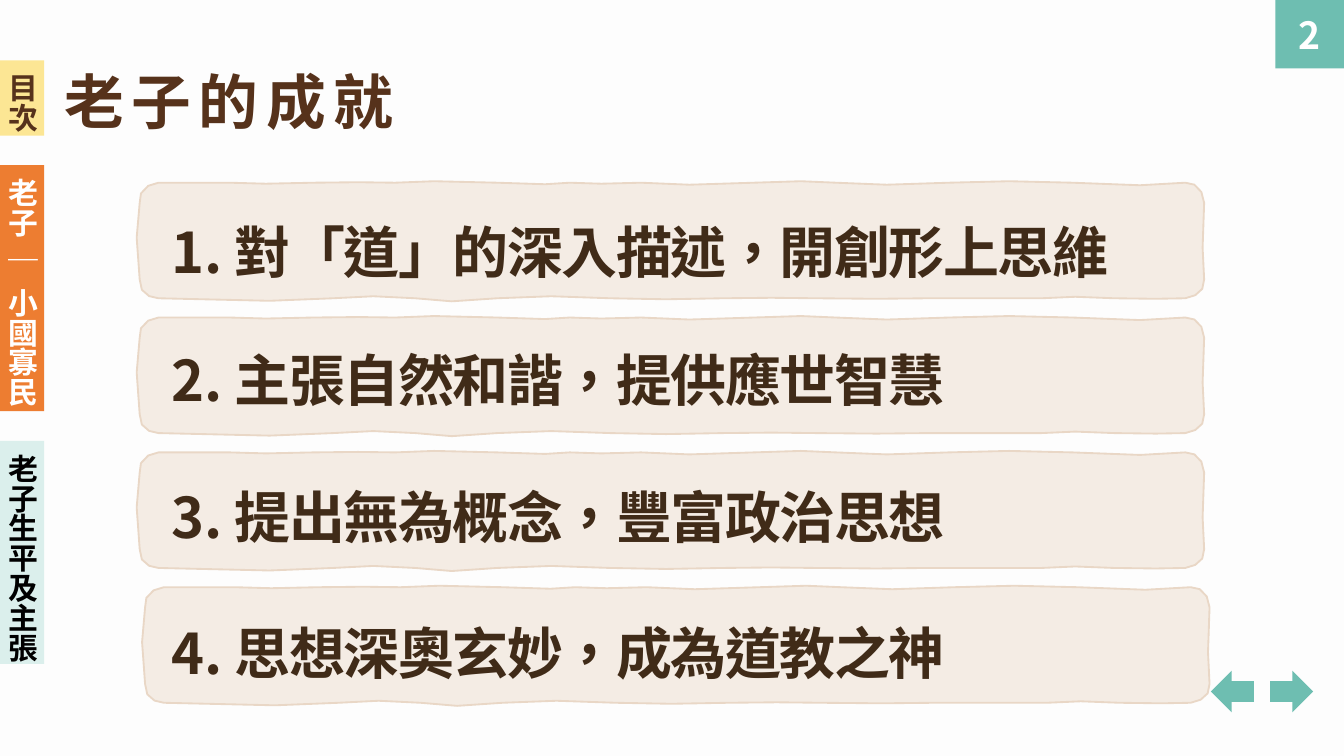
import pptx
import pptx.dml.color
import pptx.enum.lang
import pptx.enum.shapes
import pptx.enum.text
import pptx.oxml.ns
import pptx.util
from lxml import etree

Pt = pptx.util.Pt
qn = pptx.oxml.ns.qn
ALIGN = pptx.enum.text.PP_ALIGN
ANCHOR = pptx.enum.text.MSO_ANCHOR
SHAPE = pptx.enum.shapes.MSO_SHAPE

FONT = "Noto Sans CJK SC"
COLORS = {
    "paper": "FDFDFD", "teal": "6EBEB1", "mint": "DBEFEC", "yellow": "FCE694",
    "orange": "ED7D31", "panel": "F4ECE4", "edge": "E9D7C6", "brown": "56321B",
    "coffee": "402B18", "white": "FFFFFF", "black": "000000",
}
TITLE = "老子的成就"
PAGE_NUMBER = "2"
TABS = [
    (32.4, 40.32, "yellow", "brown", [("目次", 0)]),
    (88.56, 131.76, "orange", "white", [("老子 ｜", 0), (" ", 3.6), ("小國寡民", 0)]),
    (236.16, 119.52, "mint", "black", [("老子生平及主張", 0)]),
]
ACHIEVEMENTS = [
    ("對「道」的深入描述，開創形上思維", 74.88, 105.84),
    ("主張自然和諧，提供應世智慧", 74.88, 174.24),
    ("提出無為概念，豐富政治思想", 74.88, 247.68),
    ("思想深奧玄妙，成為道教之神", 77.76, 320.4),
]
ARROWS = [(SHAPE.LEFT_ARROW, 648.72), (SHAPE.RIGHT_ARROW, 680.4)]
PANEL_TOP, PANEL_PITCH = 97.92, 72.24
PANEL_UNIT = 0.72
CORNER_SIZE, CORNER_STEPS, SIDE_STEPS = 16, 3, 2
PANEL_START = (0, 15)
PANEL_CURVES = [
    (-2, 8, 6, 0, 14, 0), (32, -2, 56, 2, 67, 0), (79, -1, 106, 3, 129, 0),
    (151, -2, 176, 1, 190, 0), (204, 0, 228, -3, 266, 0), (304, 4, 305, -1, 320, 0),
    (335, 2, 350, 0, 373, 0), (396, 1, 418, 3, 457, 0), (496, -2, 491, -1, 518, 0),
    (545, 2, 564, 2, 602, 0), (641, -1, 652, -2, 694, 0), (736, 3, 758, 2, 778, 0),
    (785, -1, 792, 6, 792, 15), (791, 42, 790, 58, 792, 72), (793, 80, 786, 85, 778, 86),
    (767, 85, 748, 88, 725, 86), (701, 84, 690, 85, 671, 86), (652, 87, 606, 85, 587, 86),
    (568, 87, 531, 86, 503, 86), (475, 86, 466, 85, 434, 86), (402, 87, 381, 87, 350, 86),
    (320, 85, 291, 83, 266, 86), (241, 89, 221, 89, 205, 86), (188, 83, 159, 85, 144, 86),
    (129, 87, 76, 90, 14, 86), (7, 86, -1, 81, 0, 72), (-3, 49, -3, 31, 0, 15),
]


def rgb(name):
    return pptx.dml.color.RGBColor.from_string(COLORS[name])


def style(para, size, color, align=ALIGN.LEFT, spacing=0):
    para.alignment = align
    font = para.font
    font.name, font.size, font.bold = FONT, Pt(size), True
    font.color.rgb = rgb(color)
    font.language_id = pptx.enum.lang.MSO_LANGUAGE_ID.TRADITIONAL_CHINESE
    props = para._p.pPr.find(qn("a:defRPr"))
    props.set("spc", str(round(spacing * 100)))
    etree.SubElement(props, qn("a:ea"), typeface=FONT)


def place(shape, left, top, width, height):
    shape.left, shape.top = Pt(left), Pt(top)
    shape.width, shape.height = Pt(width), Pt(height)


def paint(shape, fill, line=None):
    shape.shadow.inherit = False
    shape.fill.solid()
    shape.fill.fore_color.rgb = rgb(fill)
    if line:
        shape.line.color.rgb = rgb(line)
        shape.line.width = Pt(1)
    else:
        shape.line.fill.background()


def add_block(kind, left, top, width, height, fill):
    block = page.shapes.add_shape(kind, Pt(left), Pt(top), Pt(width), Pt(height))
    paint(block, fill)
    block.text_frame.vertical_anchor = ANCHOR.MIDDLE
    return block


def trace(start, curves):
    points = [start]
    for x1, y1, x2, y2, x3, y3 in curves:
        x0, y0 = points[-1]
        is_corner = max(abs(x3 - x0), abs(y3 - y0)) <= CORNER_SIZE
        steps = CORNER_STEPS if is_corner else SIDE_STEPS
        for step in range(1, steps + 1):
            t = step / steps
            a, b, c, d = (1 - t) ** 3, 3 * t * (1 - t) ** 2, 3 * t * t * (1 - t), t ** 3
            points.append((a * x0 + b * x1 + c * x2 + d * x3,
                           a * y0 + b * y1 + c * y2 + d * y3))
    return points


def add_panel(left, top):
    points = [(Pt(left + x * PANEL_UNIT), Pt(top + y * PANEL_UNIT))
              for x, y in trace(PANEL_START, PANEL_CURVES)]
    builder = page.shapes.build_freeform(*points[0])
    builder.add_line_segments(points[1:-1], close=True)
    paint(builder.convert_to_shape(), "panel", "edge")


deck = pptx.Presentation()
deck.slide_width, deck.slide_height = Pt(720), Pt(405)
page = deck.slides.add_slide(deck.slide_layouts[5])
page.background.fill.solid()
page.background.fill.fore_color.rgb = rgb("paper")

title = page.shapes.title
place(title, 27.36, 30.96, 324.72, 46.08)
title.text_frame.text = TITLE
title.text_frame.word_wrap = True
title.text_frame.vertical_anchor = ANCHOR.MIDDLE
title.text_frame.auto_size = pptx.enum.text.MSO_AUTO_SIZE.SHAPE_TO_FIT_TEXT
style(title.text_frame.paragraphs[0], 32, "brown", spacing=4)

badge = add_block(SHAPE.RECTANGLE, 683.28, 0, 36.72, 36.72, "teal")
badge.text_frame.text = PAGE_NUMBER
style(badge.text_frame.paragraphs[0], 20, "white", ALIGN.CENTER)

for top, height, fill, color, spans in TABS:
    tab = add_block(SHAPE.RECTANGLE, 0, top, 23.76, height, fill)
    tab.text_frame.word_wrap = False
    tab.text_frame._txBody.bodyPr.set("vert", "eaVert")
    para = tab.text_frame.paragraphs[0]
    for text, spacing in spans:
        span = para.add_run()
        span.text = text
        if spacing:
            span._r.get_or_add_rPr().set("spc", str(round(spacing * 100)))
    style(para, 16, color)

for index, (text, panel_left, text_top) in enumerate(ACHIEVEMENTS):
    add_panel(panel_left, PANEL_TOP + index * PANEL_PITCH)
    box = page.shapes.add_textbox(Pt(84.96), Pt(text_top), Pt(554.4), Pt(46.8))
    box.text_frame.word_wrap = True
    box.text_frame.auto_size = pptx.enum.text.MSO_AUTO_SIZE.SHAPE_TO_FIT_TEXT
    para = box.text_frame.paragraphs[0]
    para.text = text
    para.line_spacing = 1.2
    props = para._p.get_or_add_pPr()
    props.set("marL", str(Pt(33.84)))
    props.set("indent", str(-Pt(33.84)))
    etree.SubElement(props, qn("a:buFont"), typeface="+mj-lt")
    etree.SubElement(props, qn("a:buAutoNum"), type="arabicPeriod", startAt=str(index + 1))
    style(para, 30, "coffee", ALIGN.JUSTIFY, -0.8)

for kind, left in ARROWS:
    add_block(kind, left, 359.28, 23.04, 22.32, "teal")

deck.save("out.pptx")
